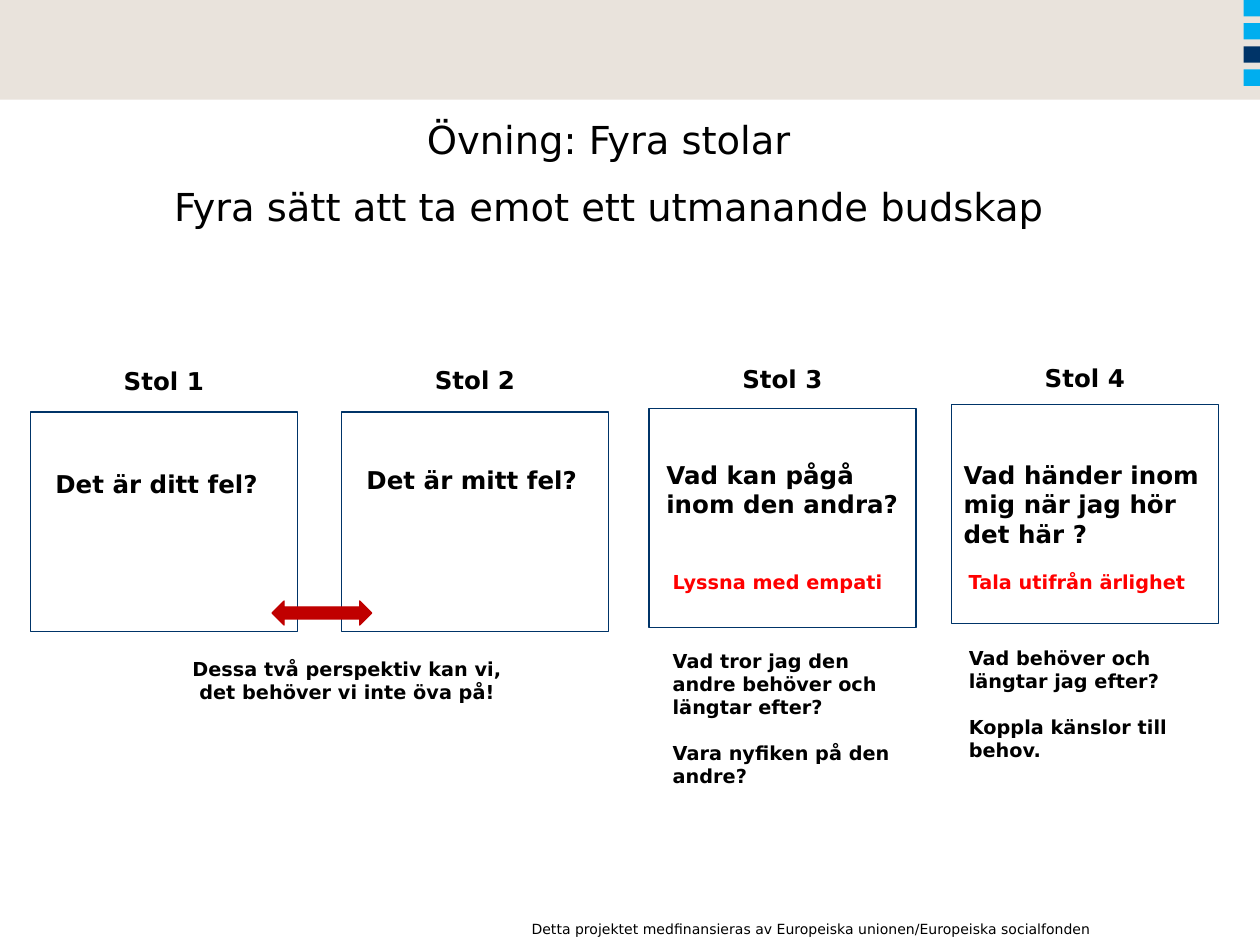
from pptx import Presentation
from pptx.dml.color import RGBColor
from pptx.enum.shapes import MSO_SHAPE
from pptx.enum.text import MSO_ANCHOR, MSO_AUTO_SIZE, PP_ALIGN
from pptx.util import Inches, Pt

FONT = "DejaVu Sans"
COLORS = {
    "band": "E9E3DC",
    "cyan": "00AEEF",
    "navy": "003468",
    "white": "FFFFFF",
    "black": "000000",
    "red": "FF0000",
    "arrow": "C00000",
}
CHAIR_W, CHAIR_H = 2.12, 1.74
LABEL_W, LABEL_H = 1.92, 0.34
CHAIRS = [
    (0.24, 3.27, 2.86),
    (2.71, 3.27, 2.85),
    (5.15, 3.24, 2.84),
    (7.55, 3.21, 2.83),
]
MESSAGES = [
    ("Det är ditt fel?", 0.34, 3.67, LABEL_W, 0.34),
    ("Det är mitt fel?", 2.81, 3.64, LABEL_W, 0.34),
    ("Vad kan pågå inom den andra?", 5.19, 3.6, CHAIR_W, 0.57),
    ("Vad händer inom mig när jag hör det här ?", 7.55, 3.6, CHAIR_W, 0.81),
]
APPROACHES = [
    ("Lyssna med empati", 5.24, 5.1, 1.21,
     ["Vad tror jag den andre behöver och längtar efter?",
      "Vara nyfiken på den andre?"]),
    ("Tala utifrån ärlighet", 7.59, 5.08, 1.03,
     ["Vad behöver och längtar jag efter?",
      "Koppla känslor till behov."]),
]


def rgb(name):
    return RGBColor.from_string(COLORS[name])


def add_box(slide, x, y, w, h, fill=None, line=None, kind=MSO_SHAPE.RECTANGLE):
    sp = slide.shapes.add_shape(kind, Inches(x), Inches(y), Inches(w), Inches(h))
    sp.shadow.inherit = False
    if fill:
        sp.fill.solid()
        sp.fill.fore_color.rgb = rgb(fill)
    else:
        sp.fill.background()
    if line:
        sp.line.color.rgb = rgb(line)
        sp.line.width = Pt(0.75)
    else:
        sp.line.fill.background()
    return sp


def write(sp, lines, size, color="black", bold=True, align=PP_ALIGN.LEFT, gap=0):
    tf = sp.text_frame
    tf.word_wrap = True
    tf.auto_size = MSO_AUTO_SIZE.NONE
    tf.vertical_anchor = MSO_ANCHOR.TOP
    for i, line in enumerate(lines):
        p = tf.add_paragraph() if i else tf.paragraphs[0]
        p.alignment = align
        p.space_before = Pt(gap if i else 0)
        r = p.add_run()
        r.text = line
        r.font.name = FONT
        r.font.size = Pt(size)
        r.font.bold = bold
        r.font.color.rgb = rgb(color)


def add_text(slide, x, y, w, h, lines, size, **style):
    sp = slide.shapes.add_textbox(Inches(x), Inches(y), Inches(w), Inches(h))
    write(sp, lines, size, **style)


def add_frame(slide):
    add_box(slide, 0, 0, 10, 0.79, "band")
    for i, color in enumerate(["cyan", "cyan", "navy", "cyan"]):
        add_box(slide, 9.87, i * 0.184, 0.13, 0.13, color)
    add_text(slide, 4.01, 7.26, 4.75, 0.24,
             ["Detta projektet medfinansieras av Europeiska unionen/Europeiska socialfonden"],
             8, bold=False, align=PP_ALIGN.RIGHT)


def add_title(slide):
    sp = slide.shapes.title
    sp.left, sp.top = Inches(0.24), Inches(0.87)
    sp.width, sp.height = Inches(9.18), Inches(1.03)
    write(sp, ["Övning: Fyra stolar", "Fyra sätt att ta emot ett utmanande budskap"],
          22, bold=False, align=PP_ALIGN.CENTER, gap=12)


def add_chairs(slide):
    for i, (x, y, label_y) in enumerate(CHAIRS, 1):
        add_box(slide, x, y, CHAIR_W, CHAIR_H, line="navy")
        label = add_box(slide, x + 0.1, label_y, LABEL_W, LABEL_H, "white")
        write(label, [f"Stol {i}"], 14, align=PP_ALIGN.CENTER)
    for text, x, y, w, h in MESSAGES:
        add_text(slide, x, y, w, h, [text], 14)


def add_approaches(slide):
    for heading, x, y, h, questions in APPROACHES:
        sp = add_box(slide, x, 4.48, 1.94, 0.29, "white")
        write(sp, [heading], 11, color="red")
        add_text(slide, x, y, CHAIR_W, h, questions, 11, gap=13)


def main():
    prs = Presentation()
    prs.slide_width, prs.slide_height = Inches(10), Inches(7.5)
    slide = prs.slides.add_slide(prs.slide_layouts[5])
    add_frame(slide)
    add_title(slide)
    add_chairs(slide)
    add_approaches(slide)
    add_text(slide, 1.09, 5.17, 3.33, 0.47,
             ["Dessa två perspektiv kan vi,", "det behöver vi inte öva på!"],
             11, align=PP_ALIGN.CENTER)
    add_box(slide, 2.16, 4.77, 0.79, 0.19, "arrow", "arrow", MSO_SHAPE.LEFT_RIGHT_ARROW)
    prs.save("out.pptx")


if __name__ == "__main__":
    main()
